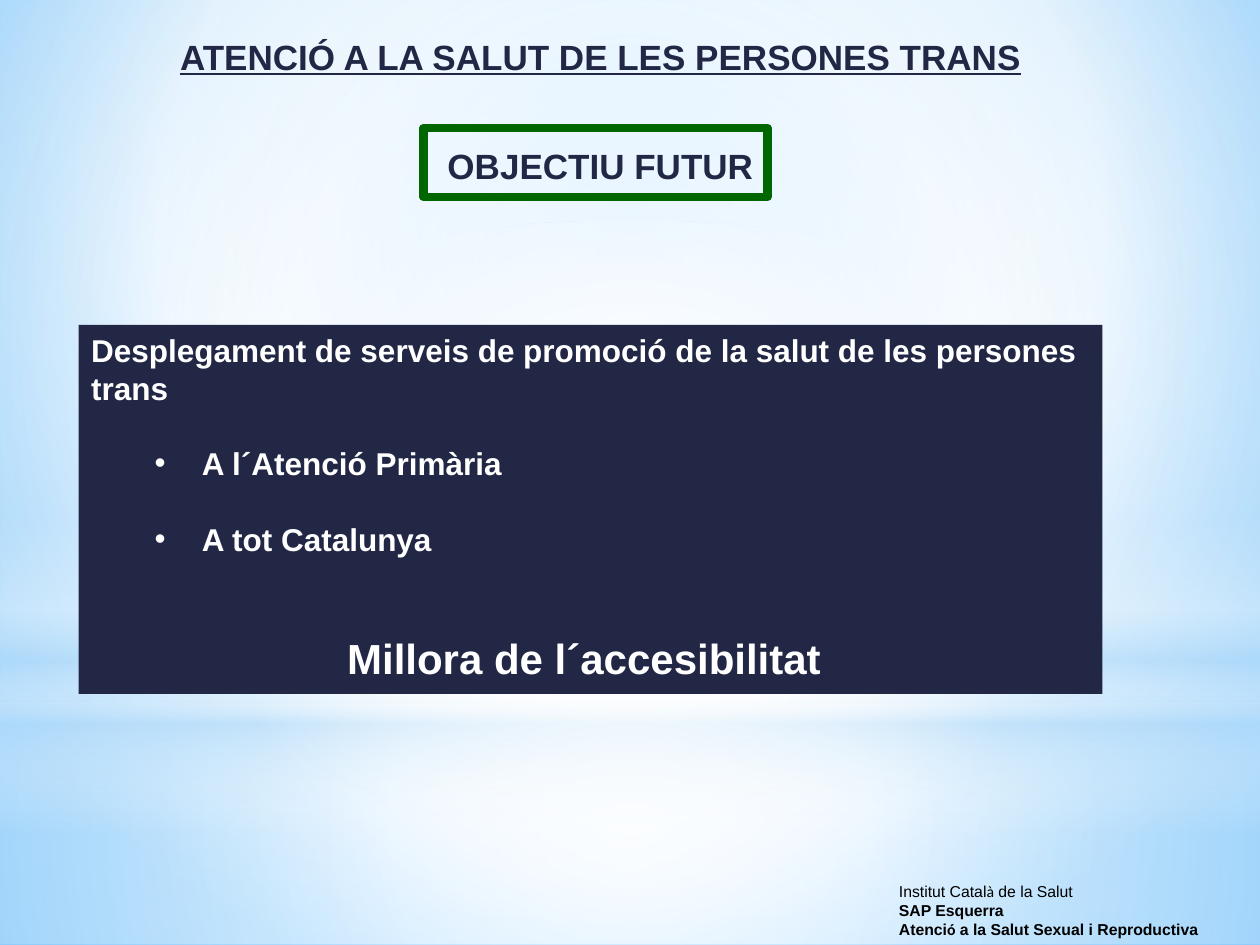
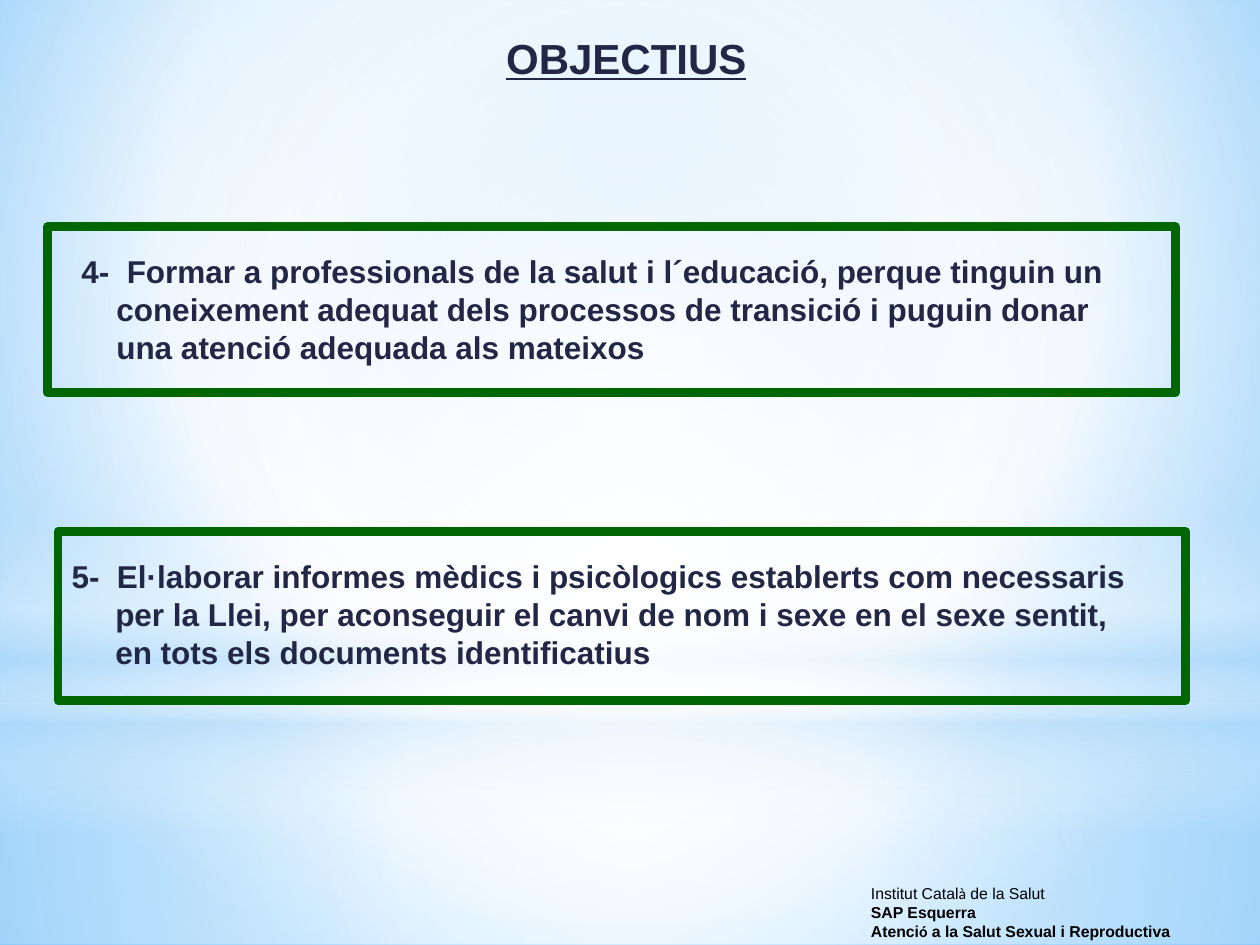
from lxml import etree
from pptx import Presentation
from pptx.dml.color import RGBColor as RGB
from pptx.enum.shapes import MSO_SHAPE as SHAPE
from pptx.enum.text import MSO_ANCHOR as ANCHOR, PP_ALIGN as ALIGN
from pptx.oxml import parse_xml
from pptx.oxml.ns import nsdecls, qn
from pptx.util import Pt

W, H = 720, 540
COLORS = {"navy": "212745", "green": "006600", "white": "FFFFFF", "black": "000000",
          "sky": "9ED5FF", "azure": "5BB9FF", "mist": "B4DCFA"}
CENTRE = (50, 50, 50, 50)


def gradient(holder, stops, focus=None):
    """Replace the solid fill of holder by a circular, or else a downward, gradient."""
    gs = "".join(
        f'<a:gs pos="{pos * 1000}"><a:srgbClr val="{COLORS[color]}">'
        f'<a:alpha val="{alpha * 1000}"/></a:srgbClr></a:gs>'
        for pos, color, alpha in stops)
    if focus:
        sides = " ".join(f'{k}="{v * 1000}"' for k, v in zip("ltrb", focus))
        kind = f'<a:path path="circle"><a:fillToRect {sides}/></a:path>'
    else:
        kind = '<a:lin ang="5400000" scaled="0"/>'
    fill = parse_xml(f'<a:gradFill {nsdecls("a")} rotWithShape="1">'
                     f'<a:gsLst>{gs}</a:gsLst>{kind}</a:gradFill>')
    holder.replace(holder.find(qn("a:solidFill")), fill)


def add_block(s, box, kind=SHAPE.RECTANGLE, fill=None, line=None):
    """Add a flat preset shape with an optional fill and thick outline."""
    sp = s.shapes.add_shape(kind, *map(Pt, box))
    sp.shadow.inherit = False
    if fill:
        sp.fill.solid()
        sp.fill.fore_color.rgb = RGB.from_string(COLORS[fill])
    else:
        sp.fill.background()
    if line:
        sp.line.color.rgb = RGB.from_string(COLORS[line])
        sp.line.width = Pt(5)
        etree.SubElement(sp.element.spPr.find(qn("a:ln")), qn("a:round"))
    else:
        sp.line.fill.background()
    return sp


def add_frame(s, box):
    """Add an empty green frame."""
    return add_block(s, box, line="green")


def add_backdrop(s):
    """Paint the slide background and its four translucent layers."""
    s.background.fill.solid()
    gradient(s.element.find(".//" + qn("p:bgPr")),
             [(0, "sky", 100), (60, "white", 100), (100, "azure", 100)], (20, 10, 20, 60))
    layers = [
        ((0, 402, W, 138), SHAPE.RECTANGLE, CENTRE,
         [(0, "white", 91), (37, "white", 76), (100, "mist", 79)]),
        ((0, 0, W, 402), SHAPE.RECTANGLE, CENTRE,
         [(0, "white", 89), (48, "white", 62), (100, "mist", 79)]),
        ((0, 296.5, W, 180), SHAPE.RECTANGLE, None,
         [(0, "white", 0), (29, "white", 30), (45, "mist", 40),
          (55, "white", 26), (65, "mist", 60), (100, "white", 0)]),
        ((0, 126, W, 402), SHAPE.OVAL, CENTRE,
         [(0, "white", 100), (56, "white", 0)]),
    ]
    for box, kind, focus, stops in layers:
        sp = add_block(s, box, kind, fill="white")
        gradient(sp.element.spPr, stops, focus)


def add_run(p, text, size=18, color="navy", bold=True, underline=False, font="Arial"):
    """Add a formatted run to a paragraph."""
    r = p.add_run()
    r.text = text
    f = r.font
    f.size, f.bold, f.underline, f.name = Pt(size), bold, underline, font
    f.color.rgb = RGB.from_string(COLORS[color])


def next_par(tf, align=ALIGN.LEFT, before=0, margin=0, hang=0, bullet=None):
    """Return a new paragraph, reusing the empty first one."""
    p = tf.paragraphs[0]
    if p.runs:
        p = tf.add_paragraph()
    p.alignment, p.space_before = align, Pt(before)
    pPr = p._p.get_or_add_pPr()
    pPr.set("marL", str(int(Pt(margin))))
    pPr.set("indent", str(int(Pt(-hang))))
    if bullet:
        etree.SubElement(pPr, qn("a:buFont"), typeface="Arial")
        etree.SubElement(pPr, qn("a:buChar"), char=bullet)
    return p


def add_box(s, box, wrap=True, anchor=ANCHOR.TOP):
    """Add a text box and return its text frame."""
    tf = s.shapes.add_textbox(*map(Pt, box)).text_frame
    tf.word_wrap, tf.vertical_anchor = wrap, anchor
    return tf


def add_heading(s, box, text, align=ALIGN.LEFT, wrap=False, **fmt):
    """Add a one-line heading."""
    add_run(next_par(add_box(s, box, wrap), align), text, **fmt)


def add_footer(s, left, top):
    """Add the three-line signature of the health service."""
    tf = add_box(s, (left, top, 204, 53.2), anchor=ANCHOR.BOTTOM)
    tf.margin_left = Pt(9.7)
    lines = [(False, "Institut Catal", "à", " de la Salut"),
             (True, "SAP Esquerra"),
             (True, "Atenci", "ó", " a la Salut Sexual i Reproductiva")]
    for bold, *parts in lines:
        p = next_par(tf)
        for part in parts:
            font = "Calibri" if part in ("à", "ó") else "Arial"
            add_run(p, part, size=9, color="black", bold=bold, font=font)


def add_goal(s, box, lines, margin):
    """Add a numbered goal whose later lines are indented by margin."""
    tf = add_box(s, box)
    first, *rest = lines
    add_run(next_par(tf), first)
    for line in rest:
        add_run(next_par(tf, margin=margin), line)


def add_panel(s, box):
    """Add the navy panel with the plan for new services."""
    sp = add_block(s, box, fill="navy")
    tf = sp.text_frame
    tf.word_wrap, tf.vertical_anchor = True, ANCHOR.TOP
    gap = 21.5
    for text in ("Desplegament de serveis de promoció de la salut de les persones", "trans"):
        add_run(next_par(tf), text, color="white")
    for text in ("A l´Atenció Primària", "A tot Catalunya"):
        p = next_par(tf, before=gap, margin=63.3, hang=27, bullet="•")
        add_run(p, text, color="white")
    p = next_par(tf, before=2 * gap, margin=146.3)
    add_run(p, "Millora de l´accesibilitat", size=24, color="white")


def future_slide(s):
    """Fill the slide on the future objective."""
    add_heading(s, (95.8, 16.5, 499, 31.7), "ATENCIÓ A LA SALUT DE LES PERSONES TRANS",
                wrap=True, size=20, underline=True)
    add_frame(s, (242, 73.2, 196.5, 39.4))
    add_heading(s, (247.7, 78.8, 190.8, 31.7), "OBJECTIU FUTUR", ALIGN.CENTER, size=20)
    add_panel(s, (45, 185.6, 585, 210.9))
    add_footer(s, 504, 486.8)


def goals_slide(s):
    """Fill the slide on objectives four and five."""
    add_footer(s, 488, 488)
    add_frame(s, (27.2, 129.5, 644.4, 95))
    add_frame(s, (33.2, 303.8, 644.4, 96.5))
    add_heading(s, (282.2, 15.1, 153.4, 36), "OBJECTIUS", size=24, underline=True)
    add_goal(s, (39.4, 140.4, 620, 72.7), [
        "4-  Formar a professionals de la salut i l´educació, perque tinguin un",
        "coneixement adequat dels processos de transició i puguin donar",
        "una atenció adequada als mateixos"], margin=20)
    add_goal(s, (33.8, 315, 635, 72.7), [
        "5-  El·laborar informes mèdics i psicòlogics establerts com necessaris",
        "per la Llei, per aconseguir el canvi de nom i sexe en el sexe sentit,",
        "en tots els documents identificatius"], margin=25)


def main():
    """Build and save the two slides."""
    prs = Presentation()
    prs.slide_width, prs.slide_height = Pt(W), Pt(H)
    for fill_slide in (future_slide, goals_slide):
        s = prs.slides.add_slide(prs.slide_layouts[6])
        add_backdrop(s)
        fill_slide(s)
    prs.save("out.pptx")


if __name__ == "__main__":
    main()
